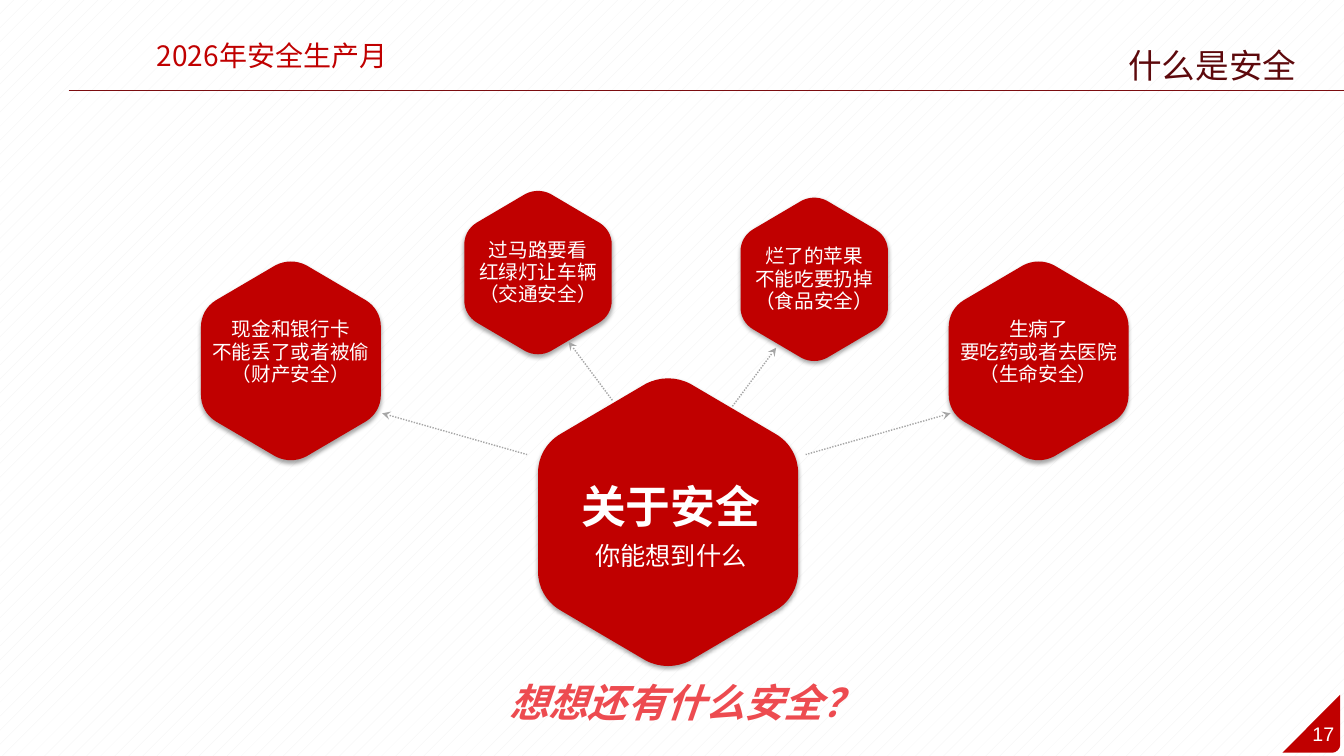
import dataclasses

import lxml.etree
import pptx
import pptx.dml.color
import pptx.enum.dml
import pptx.enum.shapes
import pptx.enum.text
import pptx.oxml
import pptx.oxml.ns
import pptx.util

Pt = pptx.util.Pt
RGB = pptx.dml.color.RGBColor.from_string
ALIGN = pptx.enum.text.PP_ALIGN
AUTO_SIZE = pptx.enum.text.MSO_AUTO_SIZE
DRAWING_NS = "http://schemas.openxmlformats.org/drawingml/2006/main"
qn = pptx.oxml.ns.qn


@dataclasses.dataclass(frozen=True)
class Theme:
    red: str = "C00000"
    dark_red: str = "5D090C"
    rule_red: str = "7C0D10"
    question_red: str = "ED4B50"
    white: str = "FFFFFF"
    pattern_grey: str = "F2F2F2"
    arrow_grey: str = "A6A6A6"
    text_font: str = "Noto Sans CJK SC"
    number_font: str = "Arial"
    number_size: int = 14
    label_size: int = 14
    subtitle_size: int = 18
    header_size: int = 20
    title_size: int = 24
    question_size: int = 28
    topic_size: int = 32


# Two rounded corners of a hexagon, as cubic curves in half-widths and half-heights.
TOP_CORNER = [(-0.17, -0.96), (-0.06, -1.01), (0.06, -1.01), (0.17, -0.96)]
RIGHT_CORNER = [(0.83, -0.61), (0.94, -0.55), (1, -0.45), (1, -0.34)]


def hexagon_corners(center_x, center_y, width, height):
    lower_right = [(x, -y) for x, y in reversed(RIGHT_CORNER)]
    half = [TOP_CORNER, RIGHT_CORNER, lower_right]
    corners = half + [[(-x, -y) for x, y in corner] for corner in half]
    return [[(center_x + x * width / 2, center_y + y * height / 2) for x, y in corner]
            for corner in corners]


class SlideBuilder:
    def __init__(self, slide, theme):
        self.slide = slide
        self.theme = theme

    def background(self):
        fill = self.slide.background.fill
        fill.patterned()
        fill.pattern = pptx.enum.dml.MSO_PATTERN.PERCENT_5
        fill.fore_color.rgb = RGB(self.theme.pattern_grey)
        fill.back_color.rgb = RGB(self.theme.white)

    def outline(self, corners, shadow=False):
        """Draw a closed red shape; a corner is one sharp point or four points of a cubic curve."""
        points = [(Pt(x), Pt(y)) for corner in corners for x, y in corner]
        builder = self.slide.shapes.build_freeform(*points[0], scale=1.0)
        builder.add_line_segments(points[1:], close=True)
        shape = builder.convert_to_shape()
        segments = list(shape._element.iter(qn("a:lnTo")))
        position = 0
        for corner in corners:
            if len(corner) == 4:
                first, *others = segments[position:position + 3]
                curve = lxml.etree.Element(qn("a:cubicBezTo"))
                first.addprevious(curve)
                for segment in (first, *others):
                    curve.append(segment[0])
                    segment.getparent().remove(segment)
            position += len(corner)
        shape.shadow.inherit = False
        shape.fill.solid()
        shape.fill.fore_color.rgb = RGB(self.theme.red)
        shape.line.fill.background()
        if shadow:
            effects = shape._element.spPr.find(qn("a:effectLst"))
            effects.append(pptx.oxml.parse_xml(
                f'<a:outerShdw xmlns:a="{DRAWING_NS}" blurRad="{Pt(3.1)}" dist="{Pt(1.8)}" '
                'dir="5400000" algn="t" rotWithShape="0"><a:srgbClr val="000000">'
                '<a:alpha val="35000"/></a:srgbClr></a:outerShdw>'))

    def text(self, box, lines, color, align=ALIGN.CENTER, font=None, spacing=None, **frame_format):
        """Write lines of (text, size, extra font values) in a box of left, top, width, height."""
        font = font or self.theme.text_font
        frame = self.slide.shapes.add_textbox(*map(Pt, box)).text_frame
        frame_values = {"word_wrap": True, "auto_size": AUTO_SIZE.SHAPE_TO_FIT_TEXT, **frame_format}
        for name, value in frame_values.items():
            setattr(frame, name, value)
        for index, (content, size, extra) in enumerate(lines):
            paragraph = frame.add_paragraph() if index else frame.paragraphs[0]
            paragraph.alignment = align
            if spacing:
                paragraph.line_spacing = Pt(spacing)
            run = paragraph.add_run()
            run.text = content
            for name, value in {"name": font, "size": Pt(size), **extra}.items():
                setattr(run.font, name, value)
            run.font.color.rgb = RGB(color)
            east_asian = lxml.etree.SubElement(run._r.get_or_add_rPr(), qn("a:ea"))
            east_asian.set("typeface", font)

    def hexagon(self, center, size, text_size, lines, spacing, text_shift=(0, 0)):
        self.outline(hexagon_corners(*center, *size), shadow=True)
        box = [center[axis] + text_shift[axis] - text_size[axis] / 2 for axis in (0, 1)]
        margins = {"margin_left": Pt(8.64), "margin_right": Pt(8.64),
                   "margin_top": Pt(4.32), "margin_bottom": Pt(4.32)}
        self.text((*box, *text_size), lines, self.theme.white, spacing=spacing, **margins)

    def line(self, start, end, color, width):
        connector = self.slide.shapes.add_connector(
            pptx.enum.shapes.MSO_CONNECTOR.STRAIGHT, *map(Pt, (*start, *end)))
        connector.line.color.rgb = RGB(color)
        connector.line.width = Pt(width)
        lxml.etree.SubElement(connector._element.spPr, qn("a:effectLst"))
        return connector

    def arrow(self, tip, tail):
        connector = self.line(tip, tail, self.theme.arrow_grey, 1)
        connector.line.dash_style = pptx.enum.dml.MSO_LINE.ROUND_DOT
        head = lxml.etree.SubElement(connector.line._get_or_add_ln(), qn("a:headEnd"))
        head.set("type", "stealth")


def main():
    theme = Theme()
    presentation = pptx.Presentation()
    presentation.slide_width, presentation.slide_height = Pt(960), Pt(540)
    builder = SlideBuilder(presentation.slides.add_slide(presentation.slide_layouts[6]), theme)

    builder.background()
    builder.line((49, 64.4), (960, 64.4), theme.rule_red, 0.75)
    page_corner = [(957.3, 532), (957.3, 535), (954.5, 537.7), (951.6, 537.7)]
    builder.outline([[(957.3, 496.2)], page_corner, [(916, 537.7)]])
    builder.text((929.5, 512, 31.5, 24.2), [("17", theme.number_size, {})], theme.white,
                 font=theme.number_font, word_wrap=False)
    builder.text((70.9, 23.8, 247, 31.5), [("2026年安全生产月", theme.header_size, {})], theme.red)
    builder.text((578.5, 28.4, 575, 36), [("什么是安全", theme.title_size, {})], theme.dark_red)

    small = {"size": (105.3, 117), "text_size": (173.5, 57)}
    large = {"size": (128.5, 142.3), "text_size": (211.5, 57), "text_shift": (0, -6.3)}
    examples = [
        ((384.3, 194.7), small, ["过马路要看", "红绿灯让车辆", "（交通安全）"]),
        ((207.8, 257.8), large, ["现金和银行卡", "不能丢了或者被偷", "（财产安全）"]),
        ((581.6, 199.5), small, ["烂了的苹果", "不能吃要扔掉", "（食品安全）"]),
        ((741.9, 257.8), large, ["生病了", "要吃药或者去医院", "（生命安全）"]),
    ]
    for center, format_values, lines in examples:
        builder.hexagon(center, lines=[(line, theme.label_size, {}) for line in lines],
                        spacing=16, **format_values)
    builder.hexagon((477.2, 373), (185.8, 206), (306.7, 61.2),
                    [("关于安全", theme.topic_size, {"bold": True}),
                     ("你能想到什么", theme.subtitle_size, {"bold": False})],
                    spacing=27, text_shift=(2, 6.5))

    for (tip_x, tip_y), (run_x, run_y) in [
        ((273, 295.2), (103.5, 29.5)), ((679, 295.2), (-103.5, 29.5)),
        ((554.4, 248.4), (-31.7, 42.5)), ((406.2, 244.1), (31.7, 42.5)),
    ]:
        builder.arrow((tip_x, tip_y), (tip_x + run_x, tip_y + run_y))

    builder.text((357, 481, 575, 39),
                 [("想想还有什么安全？", theme.question_size, {"bold": True, "italic": True})],
                 theme.question_red, align=ALIGN.LEFT, auto_size=AUTO_SIZE.NONE)
    presentation.save("out.pptx")


if __name__ == "__main__":
    main()
